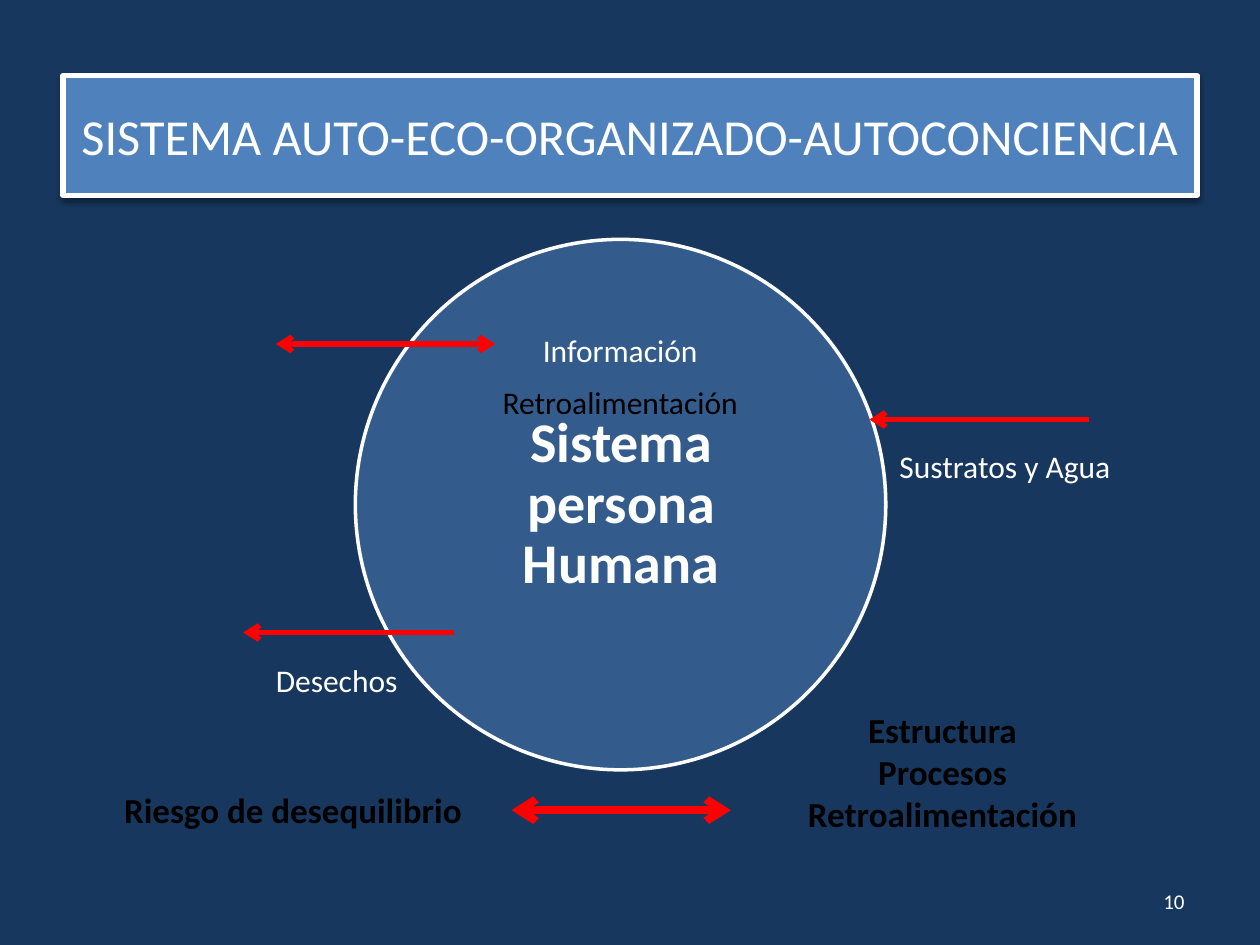
"""Build the slide about the human person as a self-organised system."""
from lxml.etree import SubElement
from pptx import Presentation
from pptx.dml.color import RGBColor
from pptx.enum.shapes import MSO_CONNECTOR, MSO_SHAPE
from pptx.enum.text import MSO_ANCHOR as Anchor, MSO_AUTO_SIZE as AutoSize, PP_ALIGN as Align
from pptx.oxml.ns import qn
from pptx.util import Inches, Pt

NAVY = RGBColor(0x17, 0x37, 0x5E)
BLUE = RGBColor(0x4F, 0x81, 0xBD)
RED = RGBColor(0xFF, 0x00, 0x00)
WHITE = RGBColor(0xFF, 0xFF, 0xFF)
BLACK = RGBColor(0x00, 0x00, 0x00)
FONT = "Calibri"

TITLE = "SISTEMA AUTO-ECO-ORGANIZADO-AUTOCONCIENCIA"
TITLE_BOX = (0.5, 0.6, 9, 0.95)
CIRCLE_BOX = (2.82, 1.9, 4.21, 4.21)
CORE = "Sistema persona Humana"
CORE_BOX = (3.44, 2.52, 2.98, 2.98)
PAGE = "10"
PAGE_BOX = (7.17, 6.95, 2.33, 0.4)

ARROWS = [
    {"start": 2.19, "end": 3.93, "y": 2.73, "double": True},
    {"start": 4.06, "end": 5.8, "y": 6.43, "double": True, "width": 4.5},
    {"start": 8.64, "end": 6.9, "y": 3.33},
    {"start": 3.6, "end": 1.93, "y": 5.02},
]
FLOW_LABELS = [
    ("Retroalimentación", (3.89, 2.99, 2.09, 0.4), BLACK),
    ("Información", (4.21, 2.58, 1.44, 0.4), WHITE),
    ("Desechos", (2.09, 5.2, 1.18, 0.4), WHITE),
    ("Sustratos y Agua", (7.04, 3.5, 1.89, 0.4), WHITE),
]
BALANCE_LABELS = [
    ("Riesgo de desequilibrio", (0.68, 6.21, 3.29, 0.44)),
    ("Estructura\nProcesos\nRetroalimentación", (6.02, 5.57, 2.92, 1.11)),
]


def write(shape, text, size=18, color=WHITE, bold=False, align=Align.CENTER,
          anchor=Anchor.TOP, wrap=True, grow=False, margin=None, spacing=None):
    frame = shape.text_frame
    frame.text = text
    frame.word_wrap = wrap
    frame.vertical_anchor = anchor
    frame.auto_size = AutoSize.SHAPE_TO_FIT_TEXT if grow else AutoSize.NONE
    if margin is not None:
        frame.margin_left = frame.margin_right = Inches(margin)
        frame.margin_top = frame.margin_bottom = Inches(margin)
    for paragraph in frame.paragraphs:
        paragraph.alignment = align
        paragraph.line_spacing = spacing
        font = paragraph.runs[0].font
        font.name, font.size, font.bold = FONT, Pt(size), bold
        font.color.rgb = color


def add_text(slide, text, box, **style):
    write(slide.shapes.add_textbox(*map(Inches, box)), text, **style)


def add_panel(slide, kind, box, line_width):
    shape = slide.shapes.add_shape(kind, *map(Inches, box))
    shape.shadow.inherit = False
    shape.fill.solid()
    shape.fill.fore_color.rgb = BLUE
    shape.line.color.rgb = WHITE
    shape.line.width = Pt(line_width)
    return shape


def set_alpha(color, percent):
    SubElement(color, qn("a:alpha"), val=str(percent * 1000))


def add_shadow(shape):
    effects = shape._element.spPr.find(qn("a:effectLst"))
    shadow = SubElement(effects, qn("a:outerShdw"), blurRad=str(Pt(3.1)),
                        dist=str(Pt(1.6)), dir="5400000", rotWithShape="0")
    set_alpha(SubElement(shadow, qn("a:srgbClr"), val=str(BLACK)), 38)


def add_arrow(slide, start, end, y, double=False, width=3):
    arrow = slide.shapes.add_connector(
        MSO_CONNECTOR.STRAIGHT, Inches(start), Inches(y), Inches(end), Inches(y))
    arrow.line.color.rgb = RED
    arrow.line.width = Pt(width)
    properties = arrow._element.spPr
    line = properties.find(qn("a:ln"))
    for tip in ("a:headEnd", "a:tailEnd") if double else ("a:tailEnd",):
        SubElement(line, qn(tip), type="arrow")
    SubElement(properties, qn("a:effectLst"))


def main():
    presentation = Presentation()
    presentation.slide_width, presentation.slide_height = Inches(10), Inches(7.5)
    slide = presentation.slides.add_slide(presentation.slide_layouts[6])
    slide.background.fill.solid()
    slide.background.fill.fore_color.rgb = NAVY

    title = add_panel(slide, MSO_SHAPE.RECTANGLE, TITLE_BOX, 3)
    add_shadow(title)
    write(title, TITLE, size=28.8, anchor=Anchor.MIDDLE)

    circle = add_panel(slide, MSO_SHAPE.OVAL, CIRCLE_BOX, 2)
    set_alpha(circle._element.spPr.find(qn("a:solidFill"))[0], 50)
    add_text(slide, CORE, CORE_BOX, size=32, bold=True, anchor=Anchor.MIDDLE,
             margin=0, spacing=0.9)

    for arrow in ARROWS:
        add_arrow(slide, **arrow)
    for text, box, color in FLOW_LABELS:
        add_text(slide, text, box, color=color, align=Align.LEFT, wrap=False, grow=True)
    for text, box in BALANCE_LABELS:
        add_text(slide, text, box, size=20, color=BLACK, bold=True, grow=True)
    add_text(slide, PAGE, PAGE_BOX, size=12, align=Align.RIGHT, anchor=Anchor.MIDDLE)

    presentation.save("out.pptx")


if __name__ == "__main__":
    main()
